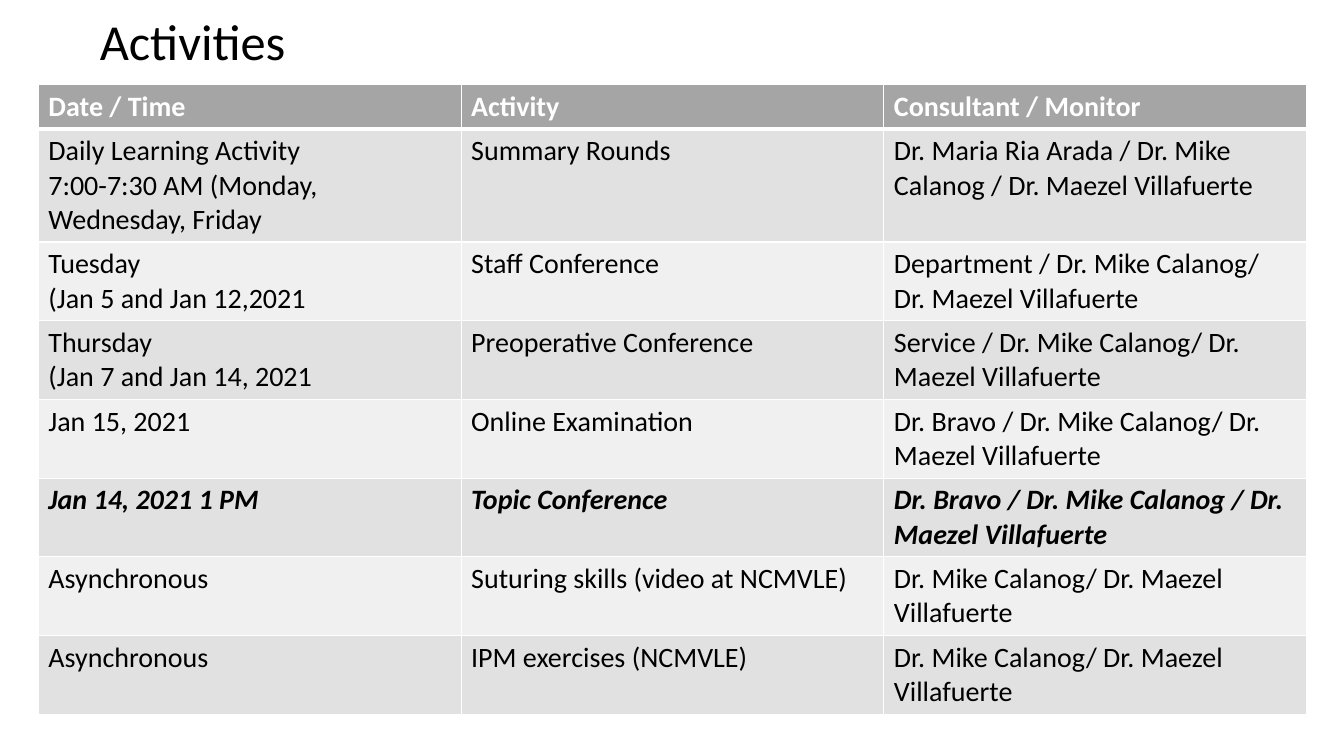
from dataclasses import dataclass

from lxml.etree import SubElement
from pptx import Presentation
from pptx.dml.color import RGBColor
from pptx.enum.text import MSO_ANCHOR, MSO_AUTO_SIZE, PP_ALIGN
from pptx.oxml.ns import qn
from pptx.util import Inches, Pt

FONT = "Calibri"
BLACK, WHITE = "000000", "FFFFFF"
HEADER_FILL, ODD_FILL, EVEN_FILL = "A5A5A5", "E1E1E1", "F0F0F0"


@dataclass(frozen=True)
class Activity:
    schedule: str
    name: str
    consultant: str
    highlighted: bool = False

    @property
    def texts(self) -> tuple[str, str, str]:
        return self.schedule, self.name, self.consultant


HEADER = Activity("Date / Time", "Activity", "Consultant / Monitor")
ACTIVITIES = [
    Activity("Daily Learning Activity\n7:00-7:30 AM (Monday, Wednesday, Friday",
             "Summary Rounds",
             "Dr. Maria Ria Arada / Dr. Mike Calanog / Dr. Maezel Villafuerte"),
    Activity("Tuesday\n(Jan 5 and Jan 12,2021", "Staff Conference",
             "Department / Dr. Mike Calanog/ Dr. Maezel Villafuerte"),
    Activity("Thursday\n(Jan 7 and Jan 14, 2021", "Preoperative Conference",
             "Service / Dr. Mike Calanog/ Dr. Maezel Villafuerte"),
    Activity("Jan 15, 2021", "Online Examination",
             "Dr. Bravo / Dr. Mike Calanog/ Dr. Maezel Villafuerte"),
    Activity("Jan 14, 2021 1 PM", "Topic Conference",
             "Dr. Bravo / Dr. Mike Calanog / Dr. Maezel Villafuerte", highlighted=True),
    Activity("Asynchronous", "Suturing skills (video at NCMVLE)",
             "Dr. Mike Calanog/ Dr. Maezel Villafuerte"),
    Activity("Asynchronous", "IPM exercises (NCMVLE)",
             "Dr. Mike Calanog/ Dr. Maezel Villafuerte"),
]


def rgb(hex_color: str) -> RGBColor:
    return RGBColor.from_string(hex_color)


def style_font(font, size: float, color: str, bold: bool = False, italic: bool = False) -> None:
    font.name, font.size = FONT, Pt(size)
    font.bold, font.italic = bold, italic
    font.color.rgb = rgb(color)


def add_borders(cell, top: float, bottom: float) -> None:
    """Give the cell white borders; call before filling, as the schema wants lines first."""
    properties = cell._tc.get_or_add_tcPr()
    for side, width in (("L", 1), ("R", 1), ("T", top), ("B", bottom)):
        line = SubElement(properties, qn(f"a:ln{side}"), w=str(Pt(width)))
        SubElement(SubElement(line, qn("a:solidFill")), qn("a:srgbClr"), val=WHITE)


def fill_row(table, index: int, activity: Activity) -> None:
    is_header = index == 0
    fill = HEADER_FILL if is_header else ODD_FILL if index % 2 else EVEN_FILL
    for column, text in enumerate(activity.texts):
        cell = table.cell(index, column)
        add_borders(cell, top=3 if index == 1 else 1, bottom=3 if is_header else 1)
        cell.fill.solid()
        cell.fill.fore_color.rgb = rgb(fill)
        cell.text = text
        for paragraph in cell.text_frame.paragraphs:
            style_font(paragraph.font, 20, WHITE if is_header else BLACK,
                       bold=is_header or activity.highlighted, italic=activity.highlighted)


def add_title(slide, text: str) -> None:
    title = slide.shapes.title
    title.left, title.top = Inches(0.89), Inches(0.11)
    title.width, title.height = Inches(11.5), Inches(0.66)
    frame = title.text_frame
    frame.text = text
    frame.auto_size = MSO_AUTO_SIZE.NONE
    frame.vertical_anchor = MSO_ANCHOR.MIDDLE
    heading = frame.paragraphs[0]
    heading.alignment = PP_ALIGN.LEFT
    heading.line_spacing = 0.9
    style_font(heading.font, 36, BLACK)


def add_schedule(slide, activities: list[Activity]) -> None:
    rows = [HEADER, *activities]
    height = Inches(6.13)
    frame = slide.shapes.add_table(len(rows), len(HEADER.texts), Inches(0.38), Inches(0.84),
                                   Inches(12.58), height)
    for index, activity in enumerate(rows):
        frame.table.rows[index].height = Inches(0.41)
        fill_row(frame.table, index, activity)
    frame.height = height


def main() -> None:
    presentation = Presentation()
    presentation.slide_width, presentation.slide_height = Inches(13.33), Inches(7.5)
    slide = presentation.slides.add_slide(presentation.slide_layouts[5])
    add_title(slide, "Activities")
    add_schedule(slide, ACTIVITIES)
    presentation.save("out.pptx")


if __name__ == "__main__":
    main()
